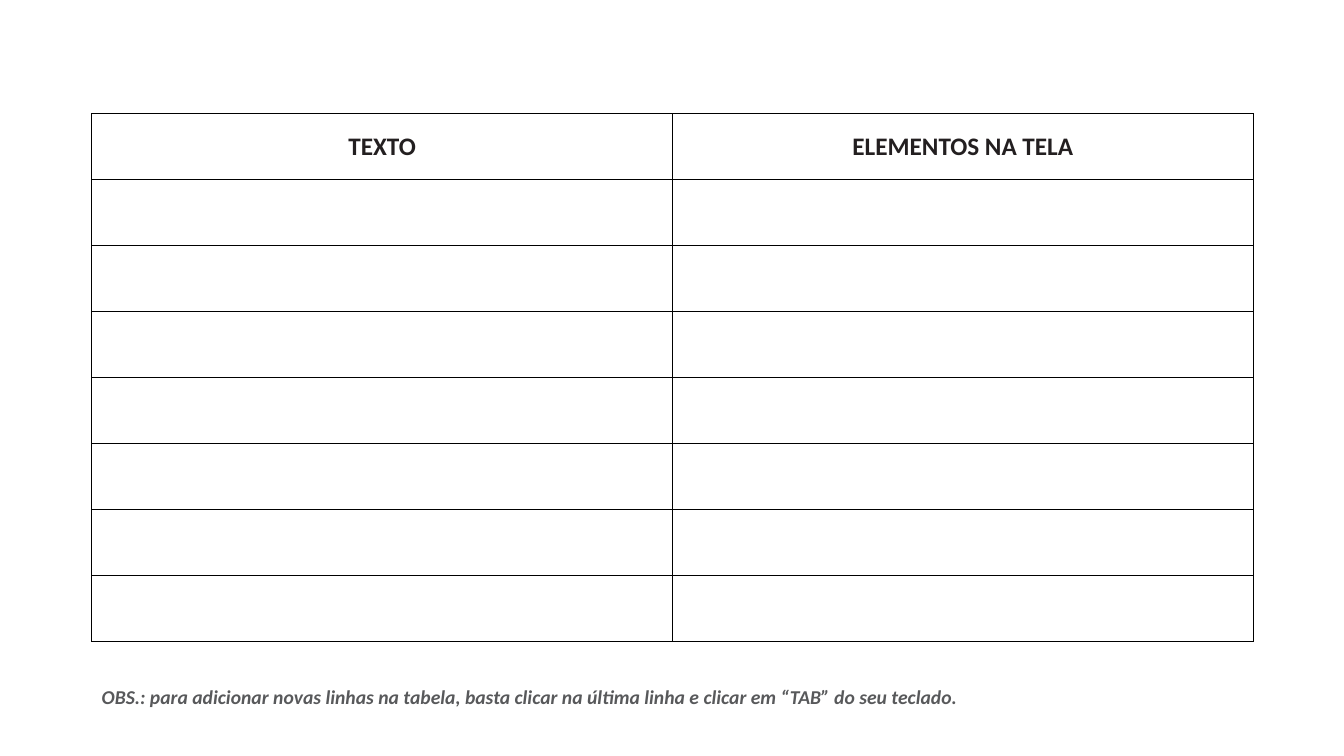
"""Build a two-column script table slide with a usage note."""
from lxml.etree import SubElement
from pptx import Presentation
from pptx.dml.color import RGBColor
from pptx.enum.text import MSO_ANCHOR, PP_ALIGN
from pptx.oxml.ns import qn
from pptx.util import Inches, Pt

HEADINGS = ["TEXTO", "ELEMENTOS NA TELA"]
EMPTY_ROWS = 7
NOTE = ("OBS.: para adicionar novas linhas na tabela, basta clicar na última linha "
        "e clicar em “TAB” do seu teclado.")
TABLE_BOX = (0.91, 1.13, 11.52, 5.24)
NOTE_BOX = (0.91, 6.75, 10.35, 0.34)
HEADING_FONT = {"name": "Calibri", "size": Pt(18), "bold": True}
NOTE_FONT = {"name": "Calibri", "size": Pt(14), "bold": True, "italic": True}
BORDER_SIDES = ("a:lnL", "a:lnR", "a:lnT", "a:lnB")


def color(value):
    return RGBColor.from_string(value)


def write(frame, text, font_values, ink, alignment):
    paragraph = frame.paragraphs[0]
    paragraph.alignment = alignment
    run = paragraph.add_run()
    run.text = text
    for name, value in font_values.items():
        setattr(run.font, name, value)
    run.font.color.rgb = color(ink)


def add_borders(cell):
    properties = cell._tc.get_or_add_tcPr()
    for position, side in enumerate(BORDER_SIDES):
        border = SubElement(properties, qn(side), w=str(Pt(1)))
        properties.insert(position, border)
        fill = SubElement(border, qn("a:solidFill"))
        SubElement(fill, qn("a:srgbClr"), val="000000")


def add_script_table(slide):
    row_count = EMPTY_ROWS + 1
    table = slide.shapes.add_table(
        row_count, len(HEADINGS), *map(Inches, TABLE_BOX)).table
    table.horz_banding = False
    for row in table.rows:
        row.height = Inches(TABLE_BOX[3] / row_count)
    for cell in table.iter_cells():
        cell.vertical_anchor = MSO_ANCHOR.MIDDLE
        cell.fill.solid()
        cell.fill.fore_color.rgb = color("FFFFFF")
        add_borders(cell)
    for column, heading in enumerate(HEADINGS):
        write(table.cell(0, column).text_frame, heading,
              HEADING_FONT, "231F20", PP_ALIGN.CENTER)


def add_note(slide):
    frame = slide.shapes.add_textbox(*map(Inches, NOTE_BOX)).text_frame
    frame.word_wrap = True
    write(frame, NOTE, NOTE_FONT, "58595B", PP_ALIGN.JUSTIFY)


def main():
    deck = Presentation()
    deck.slide_width, deck.slide_height = Inches(13.33), Inches(7.5)
    slide = deck.slides.add_slide(deck.slide_layouts[6])
    add_script_table(slide)
    add_note(slide)
    deck.save("out.pptx")


if __name__ == "__main__":
    main()
